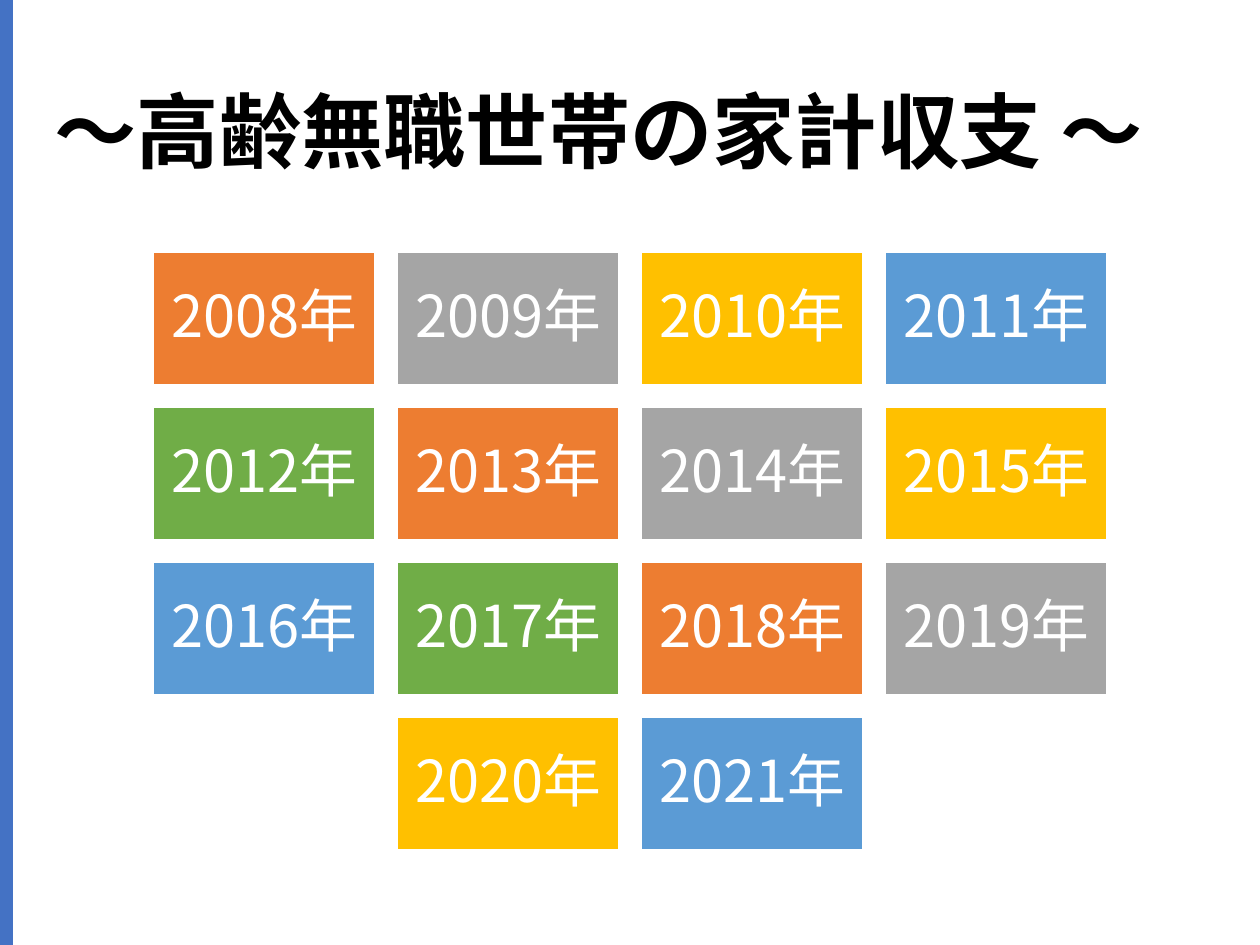
import pptx
import pptx.dml.color
import pptx.enum.shapes
import pptx.enum.text
import pptx.oxml.ns
import pptx.util
from lxml import etree

# Content
TITLE = "～高齢無職世帯の家計収支 ～"
FIRST_YEAR, LAST_YEAR = 2008, 2021
PALETTE = ["ED7D31", "A5A5A5", "FFC000", "5B9BD5", "70AD47"]
# The last tile restarts the blue after yellow, as the cycle does
FONT = "Noto Sans CJK JP"

# Layout in px
PX = 914400 // 126
SLIDE_W, SLIDE_H = 1260, 945
COLUMNS = 4
GRID_LEFT, GRID_TOP = 153, 252
TILE_W, TILE_H = 222, 133
STEP_X, STEP_Y = 244, 155
TILE_INSET = 18


def px(length):
    return pptx.util.Emu(int(length * PX))


def color(hex_string):
    return pptx.dml.color.RGBColor.from_string(hex_string)


def style(paragraph, size, hex_string, align, bold=False):
    paragraph.alignment = align
    paragraph.line_spacing = 0.9
    font = paragraph.font
    font.name, font.size, font.bold = FONT, pptx.util.Pt(size), bold
    font.color.rgb = color(hex_string)
    # East Asian typeface
    defaults = paragraph._p.pPr.find(pptx.oxml.ns.qn("a:defRPr"))
    etree.SubElement(defaults, pptx.oxml.ns.qn("a:ea"), typeface=FONT)


def add_rectangle(slide, left, top, width, height, fill):
    rectangle = slide.shapes.add_shape(
        pptx.enum.shapes.MSO_SHAPE.RECTANGLE,
        px(left), px(top), px(width), px(height))
    rectangle.shadow.inherit = False
    rectangle.fill.solid()
    rectangle.fill.fore_color.rgb = color(fill)
    rectangle.line.fill.background()
    return rectangle


def add_year(slide, left, top, year, fill):
    tile = add_rectangle(slide, left, top, TILE_W, TILE_H, fill)
    tile.line.color.rgb = color("FFFFFF")
    tile.line.width = pptx.util.Pt(1)
    frame = tile.text_frame
    frame.text = f"{year}年"
    frame.word_wrap = True
    frame.vertical_anchor = pptx.enum.text.MSO_ANCHOR.MIDDLE
    frame.margin_left = frame.margin_right = px(TILE_INSET)
    frame.margin_top = frame.margin_bottom = px(TILE_INSET)
    style(frame.paragraphs[0], 33, "FFFFFF", pptx.enum.text.PP_ALIGN.CENTER)


def main():
    deck = pptx.Presentation()
    deck.slide_width, deck.slide_height = px(SLIDE_W), px(SLIDE_H)
    slide = deck.slides.add_slide(deck.slide_layouts[5])

    # Title
    title = slide.shapes.title
    title.left, title.top, title.width, title.height = map(px, (42, 44, 1179, 183))
    title.text_frame.text = TITLE
    title.text_frame.auto_size = pptx.enum.text.MSO_AUTO_SIZE.NONE
    title.text_frame.vertical_anchor = pptx.enum.text.MSO_ANCHOR.MIDDLE
    style(title.text_frame.paragraphs[0], 47, "000000",
          pptx.enum.text.PP_ALIGN.LEFT, bold=True)

    # Side bar
    add_rectangle(slide, 0, 0, 13, SLIDE_H, "4472C4")

    # Year tiles, each row centred on the grid
    years = list(range(FIRST_YEAR, LAST_YEAR + 1))
    for start in range(0, len(years), COLUMNS):
        row = years[start:start + COLUMNS]
        row_left = GRID_LEFT + (COLUMNS - len(row)) * STEP_X / 2
        top = GRID_TOP + start // COLUMNS * STEP_Y
        for column, year in enumerate(row):
            fill = PALETTE[(start + column) % len(PALETTE)]
            add_year(slide, row_left + column * STEP_X, top, year, fill)

    deck.save("out.pptx")


if __name__ == "__main__":
    main()
